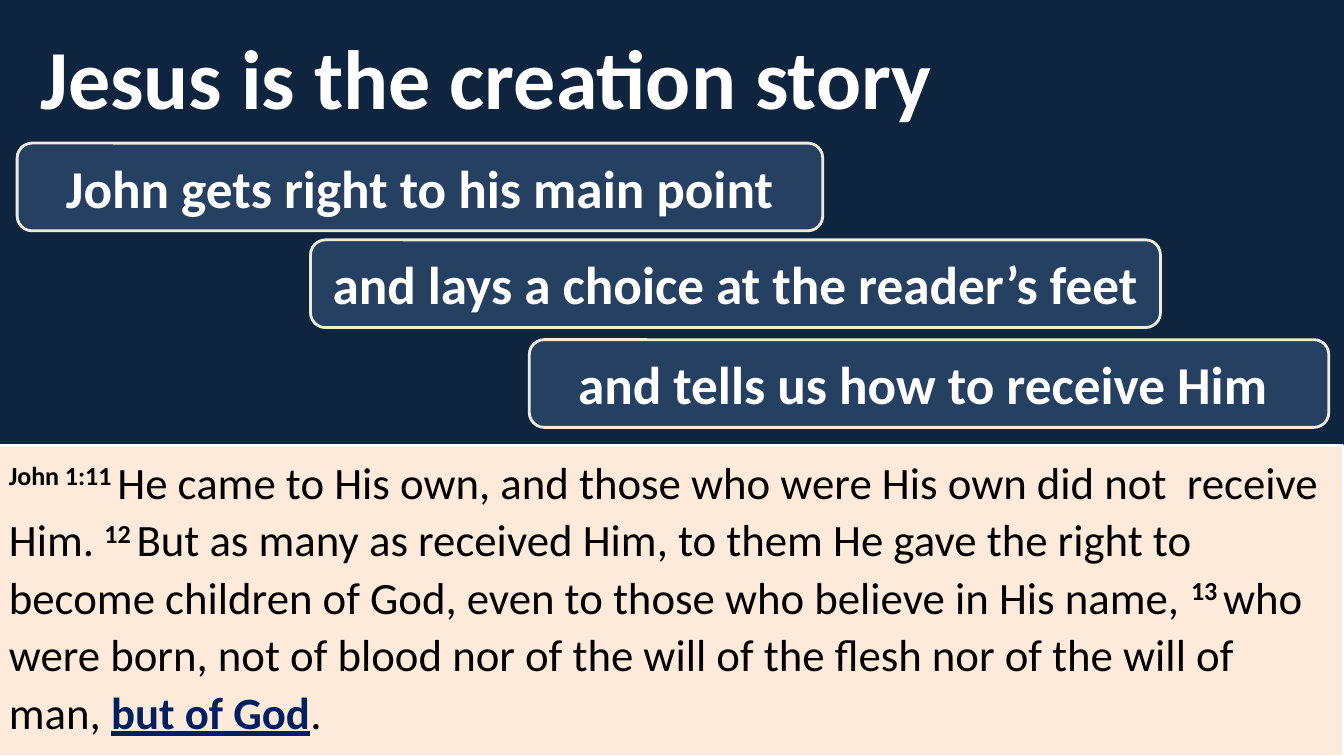
from pptx import Presentation
from pptx.dml.color import RGBColor
from pptx.enum.shapes import MSO_SHAPE as Shape
from pptx.enum.text import MSO_ANCHOR as Anchor, MSO_AUTO_SIZE as Fit, PP_ALIGN as Align
from pptx.util import Inches, Pt

WIDE, HIGH = 13.33, 7.5
NAVY, BLUE, CREAM, PEACH = "0F243E", "254061", "EEECE1", "FDEADA"
WHITE, BLACK, DEEP = "FFFFFF", "000000", "002060"

TITLE = "Jesus is the creation story "
STEPS = [
    ("John gets right to his main point", 0.17, 1.42, 7.99),
    ("and lays a choice at the reader’s feet", 3.08, 2.38, 8.43),
    ("and tells us how to receive Him ", 5.25, 3.37, 7.93),
]
STEP_HIGH = 0.87
VERSE_TOP = 4.42
MARK = dict(bold=True, base=30)
KEY = dict(bold=True, line=True, color=DEEP)
VERSES = [
    ("John 1:11 ", MARK),
    ("He came to His own, and those who were His own did not  receive Him. ", {}),
    ("12 ", MARK),
    ("But as many as received Him, to them He gave the right to become children of God, "
     "even to those who believe in His name, ", {}),
    ("13 ", MARK),
    ("who were born, not of blood nor of the will of the flesh nor of the will of man, ", {}),
    ("but of God", KEY),
    (".", {}),
]


def tint(code):
    return RGBColor.from_string(code)


def write(para, text, size=32, color=BLACK, bold=False, line=False, base=0):
    run = para.add_run()
    run.text = text
    font = run.font
    font.name, font.size = "Calibri", Pt(size)
    font.bold, font.underline = bold, line
    font.color.rgb = tint(color)
    if base:
        run._r.get_or_add_rPr().set("baseline", str(base * 1000))


def place(item, left, top, wide, high):
    item.left, item.top = Inches(left), Inches(top)
    item.width, item.height = Inches(wide), Inches(high)


def frame(item, anchor, align):
    box = item.text_frame
    box.word_wrap, box.auto_size = True, Fit.NONE
    box.vertical_anchor = anchor
    para = box.paragraphs[0]
    para.alignment = align
    return para


def panel(kind, spot, fill, edge, width):
    item = slide.shapes.add_shape(kind, *map(Inches, spot))
    item.shadow.inherit = False
    item.fill.solid()
    item.fill.fore_color.rgb = tint(fill)
    item.line.color.rgb = tint(edge)
    item.line.width = Pt(width)
    return item


deck = Presentation()
deck.slide_width, deck.slide_height = Inches(WIDE), Inches(HIGH)
slide = deck.slides.add_slide(deck.slide_layouts[5])
slide.background.fill.solid()
slide.background.fill.fore_color.rgb = tint(NAVY)

title = slide.shapes.title
place(title, 0.17, 0.25, 9.49, 1)
write(frame(title, Anchor.MIDDLE, Align.CENTER), TITLE, size=60, color=WHITE, bold=True)

spot = (-0.01, VERSE_TOP, WIDE, HIGH - VERSE_TOP)
verse = panel(Shape.RECTANGLE, spot, PEACH, WHITE, 1.5)
para = frame(verse, Anchor.TOP, Align.LEFT)
para.line_spacing, para.space_after = 1.07, Pt(8)
for text, style in VERSES:
    write(para, text, **style)

for text, left, top, wide in STEPS:
    step = panel(Shape.ROUNDED_RECTANGULAR_CALLOUT, (left, top, wide, STEP_HIGH), BLUE, CREAM, 2)
    for i, share in enumerate((-0.22, 0.5, 0.17)):
        step.adjustments[i] = share
    write(frame(step, Anchor.MIDDLE, Align.CENTER), text, size=38, color=WHITE, bold=True)

deck.save("out.pptx")
